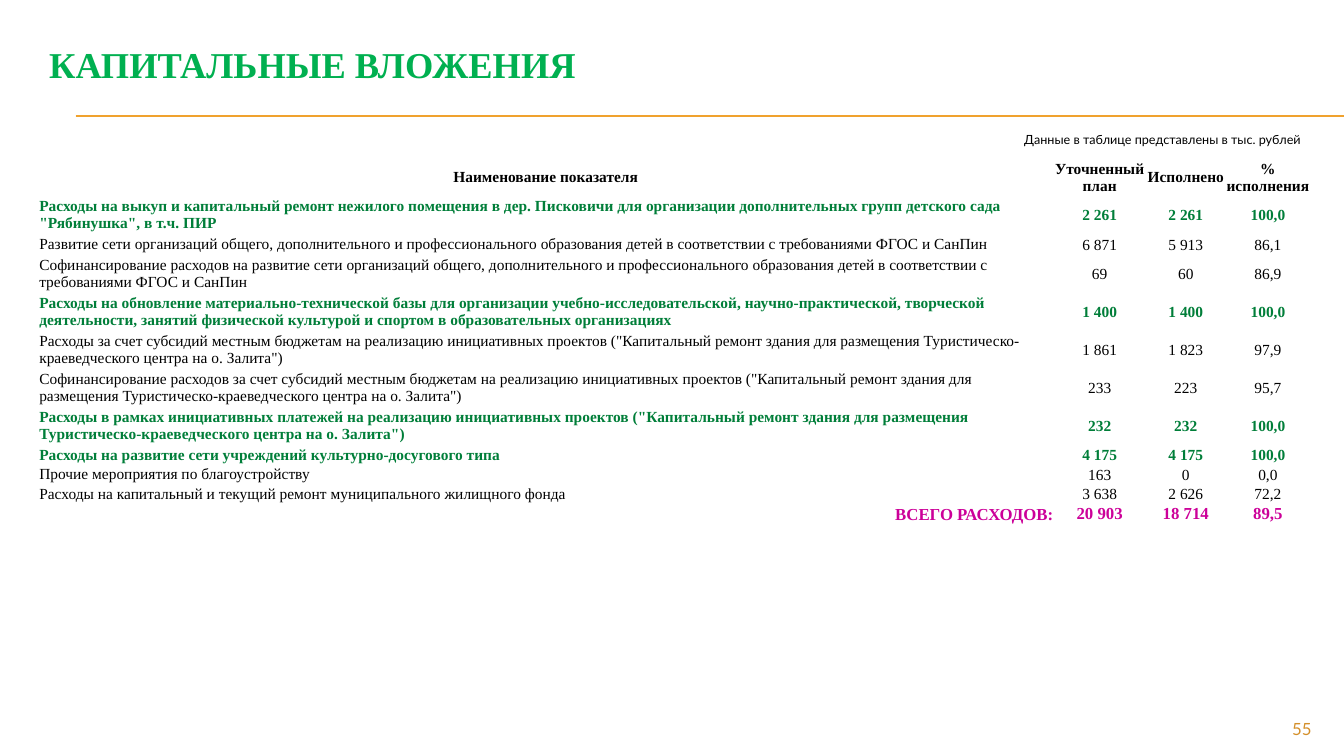
from collections import namedtuple

from lxml.etree import SubElement
from pptx import Presentation
from pptx.dml.color import RGBColor
from pptx.enum.shapes import MSO_CONNECTOR
from pptx.enum.text import MSO_ANCHOR, PP_ALIGN
from pptx.oxml.ns import qn
from pptx.util import Pt

Box = namedtuple("Box", "left top width height")

COLORS = {
    "title": "00B050",
    "rule": "F0A22E",
    "number": "D48F29",
    "text": "000000",
    "group": "007E39",
    "total": "CC0099",
    "border": "FFFFFF",
}
SERIF, SANS = "Times New Roman", "Lato"
COLUMN_WIDTHS = [725.04, 66.24, 56.88, 60.48]
ROW_STYLES = {
    "header": (11, "text", True),
    "group": (11, "group", True),
    "item": (11, "text", False),
    "total": (12, "total", True),
}
ROWS = [
    ("header", 9.36, "Наименование показателя", "Уточненный план", "Исполнено", "% исполнения"),
    ("group", 12.96, "Расходы на выкуп и капитальный ремонт нежилого помещения в дер. Писковичи для организации "
     "дополнительных групп детского сада \"Рябинушка\", в т.ч. ПИР", "2 261", "2 261", "100,0"),
    ("item", 15.12, "Развитие сети организаций общего, дополнительного и профессионального образования детей "
     "в соответствии с требованиями ФГОС и СанПин", "6 871", "5 913", "86,1"),
    ("item", 23.04, "Софинансирование расходов на развитие сети организаций общего, дополнительного и "
     "профессионального образования детей в соответствии с требованиями ФГОС и СанПин", "69", "60", "86,9"),
    ("group", 24.48, "Расходы на обновление материально-технической базы для организации учебно-исследовательской, "
     "научно-практической, творческой деятельности, занятий физической культурой и спортом в образовательных "
     "организациях", "1 400", "1 400", "100,0"),
    ("item", 23.04, "Расходы за счет субсидий местным бюджетам на реализацию инициативных проектов (\"Капитальный "
     "ремонт здания для размещения Туристическо-краеведческого центра на о. Залита\")", "1 861", "1 823", "97,9"),
    ("item", 25.92, "Софинансирование расходов за счет субсидий местным бюджетам на реализацию инициативных проектов "
     "(\"Капитальный ремонт здания для размещения Туристическо-краеведческого центра на о. Залита\")",
     "233", "223", "95,7"),
    ("group", 20.88, "Расходы в рамках инициативных платежей на реализацию инициативных проектов (\"Капитальный "
     "ремонт здания для размещения Туристическо-краеведческого центра на о. Залита\")", "232", "232", "100,0"),
    ("group", 10.08, "Расходы на развитие сети учреждений культурно-досугового типа", "4 175", "4 175", "100,0"),
    ("item", 13.68, "Прочие мероприятия по благоустройству", "163", "0", "0,0"),
    ("item", 12.96, "Расходы на капитальный и текущий ремонт муниципального жилищного фонда",
     "3 638", "2 626", "72,2"),
    ("total", 3.6, "ВСЕГО РАСХОДОВ:", "20 903", "18 714", "89,5"),
]


def write_text(frame, text, size, font, color, bold=False, align=PP_ALIGN.LEFT):
    """Fill a text frame with one formatted paragraph."""
    frame.text = text
    para = frame.paragraphs[0]
    para.alignment = align
    for span in para.runs:
        span.font.size = Pt(size)
        span.font.name = font
        span.font.bold = bold
        span.font.color.rgb = RGBColor.from_string(COLORS[color])


def add_label(page, box, text, size, font, color, bold=False, align=PP_ALIGN.LEFT,
              anchor=MSO_ANCHOR.TOP, wrap=True):
    """Place a line of text in the given box."""
    frame = page.shapes.add_textbox(*map(Pt, box)).text_frame
    frame.word_wrap = wrap
    frame.vertical_anchor = anchor
    write_text(frame, text, size, font, color, bold, align)


def add_rules(page, box):
    """Draw the two rules at the top and bottom of the box."""
    for top in (box.top, box.top + box.height):
        rule = page.shapes.add_connector(
            MSO_CONNECTOR.STRAIGHT, Pt(box.left), Pt(top), Pt(box.left + box.width), Pt(top))
        rule.line.color.rgb = RGBColor.from_string(COLORS["rule"])
        rule.line.width = Pt(0.75)
        SubElement(rule._element.spPr, qn("a:effectLst"))


def style_cell(cell, kind, is_name):
    """Set the borders, fill, margins and anchor of a cell."""
    properties = cell._tc.get_or_add_tcPr()
    for side in ("lnL", "lnR", "lnT", "lnB"):
        line = SubElement(properties, qn(f"a:{side}"), w=str(Pt(1)))
        fill = SubElement(line, qn("a:solidFill"))
        SubElement(fill, qn("a:srgbClr"), val=COLORS["border"])
    cell.fill.background()
    inset = Pt(0.72) if is_name and kind in ("group", "item") else 0
    cell.margin_left = cell.margin_right = cell.margin_top = inset
    cell.margin_bottom = 0
    cell.vertical_anchor = MSO_ANCHOR.MIDDLE
    if is_name and kind != "header":
        cell.vertical_anchor = MSO_ANCHOR.BOTTOM if kind == "total" else MSO_ANCHOR.TOP


def add_spending_table(page, box):
    """Build the table of planned and actual spending in the box."""
    table = page.shapes.add_table(len(ROWS), len(COLUMN_WIDTHS), *map(Pt, box)).table
    table.first_row = table.horz_banding = False
    for column, width in zip(table.columns, COLUMN_WIDTHS):
        column.width = Pt(width)
    name_aligns = {"header": PP_ALIGN.CENTER, "total": PP_ALIGN.RIGHT}
    for row, (kind, height, *values) in zip(table.rows, ROWS):
        row.height = Pt(height)
        size, color, bold = ROW_STYLES[kind]
        for index, (cell, value) in enumerate(zip(row.cells, values)):
            is_name = index == 0
            style_cell(cell, kind, is_name)
            align = name_aligns.get(kind, PP_ALIGN.LEFT) if is_name else PP_ALIGN.CENTER
            write_text(cell.text_frame, value, size, SERIF, color, bold, align)


def main():
    """Assemble the slide and save the deck."""
    deck = Presentation()
    deck.slide_width, deck.slide_height = Pt(960), Pt(540)
    page = deck.slides.add_slide(deck.slide_layouts[6])
    add_rules(page, Box(54, 82.8, 906, 0.72))
    add_label(page, Box(28, 18, 913.7, 54.7), "КАПИТАЛЬНЫЕ ВЛОЖЕНИЯ", 26, SERIF, "title",
              bold=True, anchor=MSO_ANCHOR.MIDDLE)
    add_spending_table(page, Box(27.36, 113.76, sum(COLUMN_WIDTHS), sum(row[1] for row in ROWS)))
    add_label(page, Box(864, 509.76, 79.92, 19.44), "55", 12, SANS, "number", align=PP_ALIGN.RIGHT)
    add_label(page, Box(721.44, 90.72, 214.56, 18), "Данные в таблице представлены в тыс. рублей",
              9, SANS, "text", align=PP_ALIGN.RIGHT, wrap=False)
    deck.save("out.pptx")


if __name__ == "__main__":
    main()
